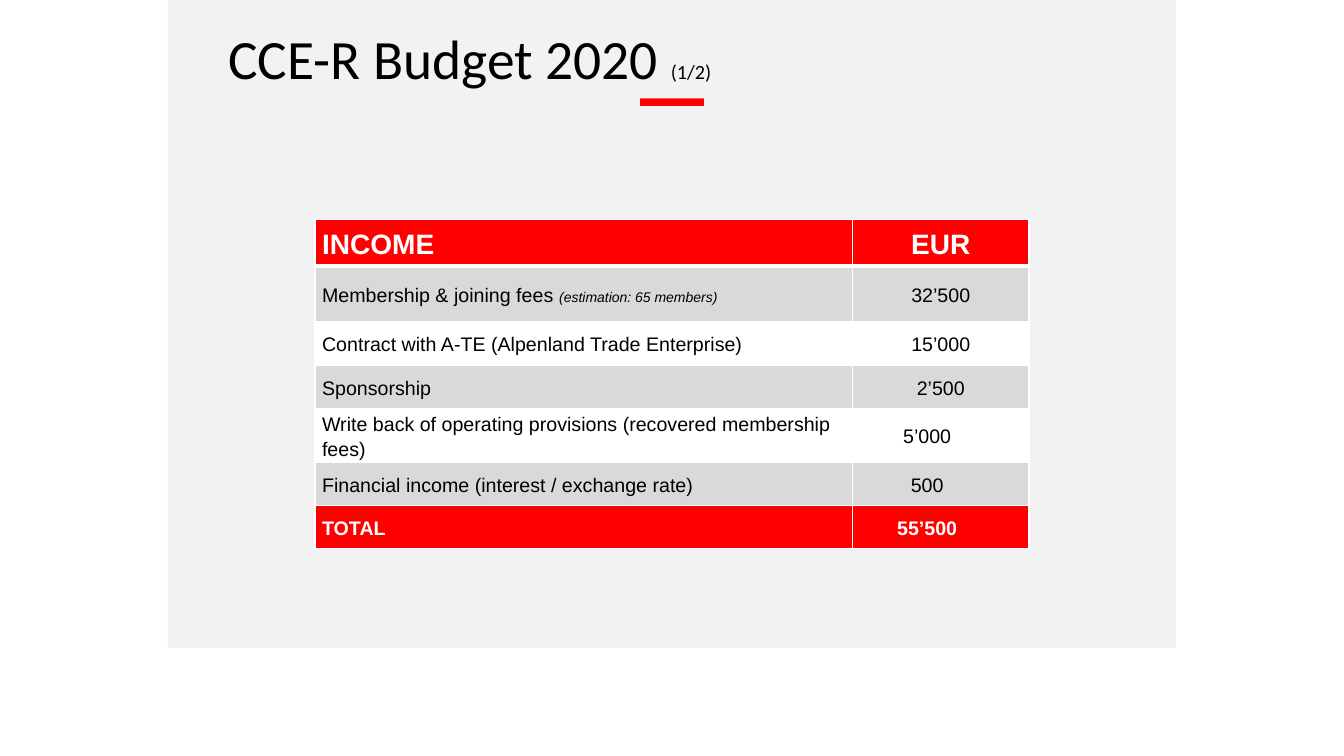
"""Build the CCE-R 2020 budget slide with its income table."""
import lxml.etree
import pptx
import pptx.dml.color
import pptx.enum.shapes
import pptx.enum.text
import pptx.oxml
import pptx.oxml.ns
import pptx.util

THEME = {
    "red": "FF0000", "panel": "F2F2F2", "band": "D9D9D9", "white": "FFFFFF", "black": "000000",
    "title_font": "Calibri", "table_font": "Arial",
    "title": 39.6, "page": 14.4, "header": 20, "body": 14, "remark": 10,
    "border": 1, "header_border": 3,
}

presentation = pptx.Presentation()
presentation.slide_width = pptx.util.Inches(13.33)
presentation.slide_height = pptx.util.Inches(7.5)
slide = presentation.slides.add_slide(presentation.slide_layouts[6])
column = presentation.slide_width / 16
row = presentation.slide_height / 7


def place(left, top, width, height):
    """Turn grid columns and rows into slide lengths."""
    return [round(left * column), round(top * row), round(width * column), round(height * row)]


def add_run(paragraph, text, color, **formats):
    """Add a run of text with the given font formats."""
    run = paragraph.add_run()
    run.text = text
    run.font.color.rgb = pptx.dml.color.RGBColor.from_string(THEME[color])
    for name, value in formats.items():
        setattr(run.font, name, value)


for color, position in (("panel", (2, 0, 12, 6)), ("red", (7.62, 0.91, 0.76, 0.07))):
    shape = slide.shapes.add_shape(pptx.enum.shapes.MSO_SHAPE.RECTANGLE, *place(*position))
    shape.shadow.inherit = False
    shape.fill.solid()
    shape.fill.fore_color.rgb = pptx.dml.color.RGBColor.from_string(THEME[color])
    shape.line.fill.background()

title = slide.shapes.add_textbox(*place(2.6, 0.28, 10.8, 0.57))
title.text_frame.word_wrap = True
title.text_frame.vertical_anchor = pptx.enum.text.MSO_ANCHOR.MIDDLE
paragraph = title.text_frame.paragraphs[0]
paragraph.line_spacing = 0.9
for text, size in (("CCE-R Budget 2020 ", "title"), ("(1/2)", "page")):
    add_run(paragraph, text, "black", name=THEME["title_font"], size=pptx.util.Pt(THEME[size]))

income = [
    ("INCOME", "", "EUR", 0.43, 0),
    ("Membership & joining fees ", "(estimation: 65 members)", "32’500", 0.52, 0),
    ("Contract with A-TE (Alpenland Trade Enterprise)", "", "15’000", 0.4, 0),
    ("Sponsorship", "", "2’500", 0.4, 0),
    ("Write back of operating provisions (recovered membership fees)", "", "5’000", 0.4, 0.27),
    ("Financial income (interest / exchange rate)", "", "500", 0.4, 0.27),
    ("TOTAL", "", "55’500", 0.4, 0.27),
]
widths = (6.4, 2.1)
heights = [entry[3] for entry in income]
frame = slide.shapes.add_table(len(income), 2, *place(3.75, 2.03, sum(widths), sum(heights)))
table = frame.table
table.first_row = table.horz_banding = False
for table_column, width in zip(table.columns, widths):
    table_column.width = round(width * column)

for index, (label, remark, amount, height, indent) in enumerate(income):
    table.rows[index].height = round(height * row)
    strong = index in (0, len(income) - 1)
    fill = "red" if strong else "band" if index % 2 else "white"
    size = pptx.util.Pt(THEME["body" if index else "header"])
    thick_side = {0: "lnB", 1: "lnT"}.get(index)
    for position, text in enumerate((label, amount)):
        cell = table.cell(index, position)
        cell.fill.solid()
        cell.fill.fore_color.rgb = pptx.dml.color.RGBColor.from_string(THEME[fill])
        cell_format = {
            "vertical_anchor": pptx.enum.text.MSO_ANCHOR.MIDDLE,
            "margin_left": pptx.util.Inches(0.07),
            "margin_right": pptx.util.Inches(0.07 + indent * position),
            "margin_top": 0, "margin_bottom": 0,
        }
        for name, value in cell_format.items():
            setattr(cell, name, value)
        paragraph = cell.text_frame.paragraphs[0]
        paragraph.line_spacing = 1.15
        if position:
            paragraph.alignment = pptx.enum.text.PP_ALIGN.CENTER
        add_run(paragraph, text, "white" if strong else "black",
                name=THEME["table_font"], size=size, bold=strong)
        if remark and not position:
            add_run(paragraph, remark, "black", name=THEME["table_font"],
                    size=pptx.util.Pt(THEME["remark"]), bold=False, italic=True)
        properties = cell._tc.get_or_add_tcPr()
        for order, side in enumerate(("lnL", "lnR", "lnT", "lnB")):
            weight = THEME["header_border" if side == thick_side else "border"]
            border = pptx.oxml.parse_xml(
                f'<a:{side} {pptx.oxml.ns.nsdecls("a")} w="{pptx.util.Pt(weight)}"><a:solidFill>'
                f'<a:srgbClr val="{THEME["white"]}"/></a:solidFill></a:{side}>')
            properties.insert(order, border)

presentation.save("out.pptx")
